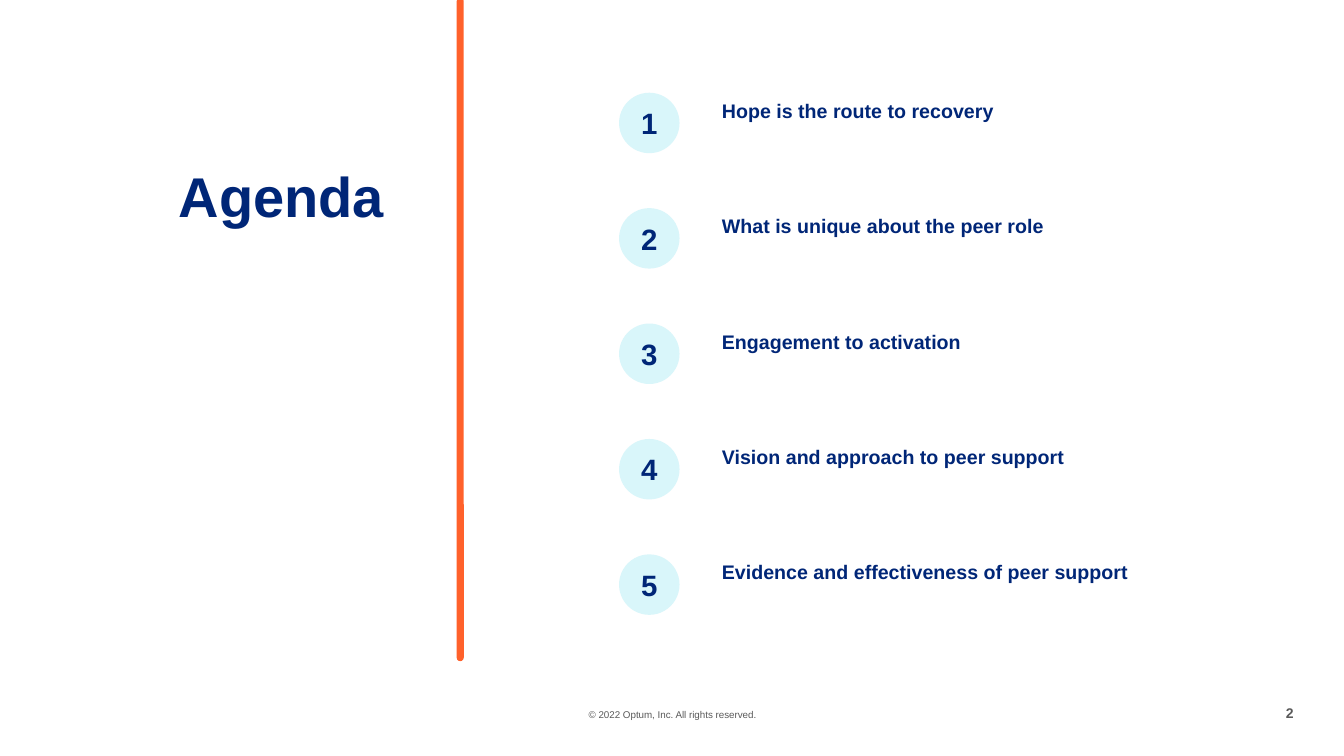
from dataclasses import dataclass

from pptx import Presentation
from pptx.dml.color import RGBColor
from pptx.enum import shapes, text
from pptx.util import Inches, Pt


@dataclass(frozen=True)
class Theme:
    font: str = "Arial"
    navy: str = "002677"
    orange: str = "FF612B"
    pale_blue: str = "D9F6FA"
    grey: str = "5A5A5A"
    title_size: int = 40
    number_size: int = 21
    topic_size: int = 14
    page_size: int = 10
    footer_size: int = 7


theme = Theme()
ALIGN = text.PP_ALIGN
SHAPE = shapes.MSO_SHAPE

presentation = Presentation()
presentation.slide_width = Inches(13.33)
presentation.slide_height = Inches(7.5)
slide = presentation.slides.add_slide(presentation.slide_layouts[6])


def add_filled_shape(kind, box, color):
    shape = slide.shapes.add_shape(kind, *map(Inches, box))
    shape.shadow.inherit = False
    shape.fill.solid()
    shape.fill.fore_color.rgb = RGBColor.from_string(color)
    shape.line.fill.background()
    return shape


def write(shape, words, size, color=theme.navy, align=ALIGN.LEFT, bold=True, inset_top=0):
    """Put one line of text in a shape whose other insets are zero."""
    frame = shape.text_frame
    frame.word_wrap = True
    frame.margin_left = frame.margin_right = frame.margin_bottom = 0
    frame.margin_top = Pt(inset_top)
    paragraph = frame.paragraphs[0]
    paragraph.alignment = align
    run = paragraph.add_run()
    run.text = words
    run.font.name = theme.font
    run.font.size = Pt(size)
    run.font.bold = bold
    run.font.color.rgb = RGBColor.from_string(color)


# Footer
footer = slide.shapes.add_textbox(*map(Inches, (5.14, 7.03, 3.06, 0.12)))
write(footer, "© 2022 Optum, Inc. All rights reserved.", theme.footer_size,
      theme.grey, ALIGN.CENTER, bold=False)
page_number = slide.shapes.add_textbox(*map(Inches, (12.66, 6.99, 0.17, 0.17)))
write(page_number, "2", theme.page_size, theme.grey, ALIGN.RIGHT)

# Divider with a rounded lower end, and the title beside it
divider = add_filled_shape(SHAPE.ROUND_2_SAME_RECTANGLE, (4.53, 0, 0.07, 6.56), theme.orange)
divider.adjustments[0] = 0.17
divider.adjustments[1] = 0.5

title = slide.shapes.add_textbox(*map(Inches, (1.18, 1.52, 2.63, 0.67)))
write(title, "Agenda", theme.title_size, align=ALIGN.RIGHT, inset_top=6)

# Numbered topics, one per row
topics = [
    "Hope is the route to recovery",
    "What is unique about the peer role",
    "Engagement to activation",
    "Vision and approach to peer support",
    "Evidence and effectiveness of peer support",
]
first_row, row_step, badge_size = 0.92, 1.145, 0.6
badge_left, topic_left, topic_width = 6.14, 7.16, 4.71

for index, topic in enumerate(topics):
    top = first_row + index * row_step
    badge = add_filled_shape(SHAPE.OVAL, (badge_left, top, badge_size, badge_size),
                             theme.pale_blue)
    badge.text_frame.vertical_anchor = text.MSO_ANCHOR.MIDDLE
    write(badge, str(index + 1), theme.number_size, align=ALIGN.CENTER)

    label = slide.shapes.add_textbox(*map(Inches, (topic_left, top + 0.06, topic_width, 0.24)))
    write(label, topic, theme.topic_size)

presentation.save("out.pptx")
